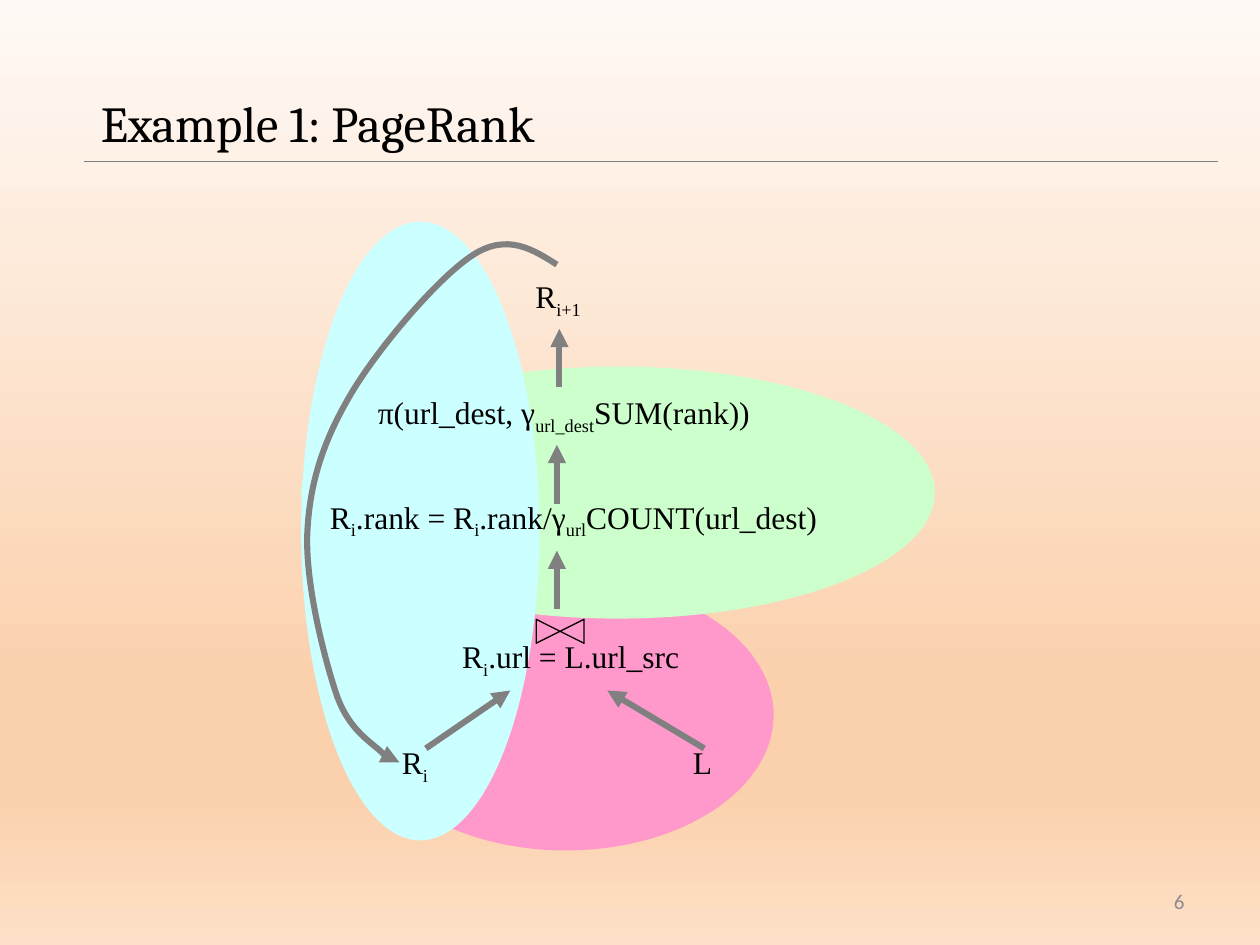
"""Build the PageRank dataflow slide."""
from lxml import etree
from pptx import Presentation
from pptx.dml.color import RGBColor
from pptx.enum.shapes import MSO_CONNECTOR, MSO_SHAPE
from pptx.enum.text import MSO_ANCHOR, PP_ALIGN
from pptx.oxml.ns import qn
from pptx.util import Inches, Pt

ELLIPSE, JOIN = MSO_SHAPE.OVAL, MSO_SHAPE.FLOWCHART_COLLATE
STRAIGHT = MSO_CONNECTOR.STRAIGHT
TOP, MIDDLE = MSO_ANCHOR.TOP, MSO_ANCHOR.MIDDLE
LEFT, RIGHT = PP_ALIGN.LEFT, PP_ALIGN.RIGHT

BLACK = RGBColor(0x00, 0x00, 0x00)
GRAY = RGBColor(0x80, 0x80, 0x80)
PAGE_GRAY = RGBColor(0x8C, 0x8C, 0x8C)
PINK = RGBColor(0xFF, 0x99, 0xCC)
GREEN = RGBColor(0xCC, 0xFF, 0xCC)
CYAN = RGBColor(0xCC, 0xFF, 0xFF)

BACKDROP = [(0, "FFFAF6"), (74, "FBD0AC"), (83, "FBD0AC"), (100, "FDE0C7")]
TITLE_FONT = {"name": "Cambria", "size": Pt(28.8)}
LABEL_FONT = {"name": "Times New Roman", "size": Pt(18)}
PAGE_FONT = {"name": "Calibri", "size": Pt(12)}

TITLE = ("Example 1: PageRank", (0.7, 0.66, 9.25, 0.62))
PAGE_NUMBER = ("6", (7.17, 6.95, 2.33, 0.4))
TITLE_RULE = ((0.67, 1.28), (9.67, 1.28))
STAGES = [
    (PINK, (2.84, 4.6, 3.3, 2.15)),
    (GREEN, (2.39, 2.91, 5.03, 2)),
    (CYAN, (2.39, 1.76, 1.89, 4.91)),
]
JOIN_BOX = (4.35, 4.82, 0.19, 0.38)
LABELS = [
    (["R", "i"], (3.09, 5.85, 0.58, 0.56)),
    (["L"], (5.4, 5.85, 0.38, 0.56)),
    (["R", "i", ".rank = R", "i", ".rank/γ", "url", "COUNT(url_dest)"],
     (2.52, 3.9, 4.9, 0.45)),
    (["R", "i", ".url = L.url_src"], (3.57, 5.01, 2.16, 0.45)),
    (["π(url_dest, γ", "url_dest", "SUM(rank))"], (2.9, 3.07, 3.86, 0.45)),
    (["R", "i+1"], (4.15, 2.15, 1.06, 0.56)),
]
ARROWS = [
    ((5.59, 5.94), (4.82, 5.48)),
    ((3.38, 5.94), (4.05, 5.48)),
    ((4.42, 4.83), (4.42, 4.37)),
    ((4.42, 4), (4.42, 3.53)),
    ((4.44, 3.07), (4.44, 2.61)),
]
LOOP_START = (4.42, 2.1)
LOOP_CURVES = [
    (4.23, 1.98), (4.03, 1.85), (3.76, 2.02),
    (3.49, 2.19), (3.01, 2.75), (2.79, 3.12),
    (2.57, 3.49), (2.46, 3.82), (2.44, 4.22),
    (2.42, 4.62), (2.57, 5.21), (2.67, 5.51),
    (2.77, 5.8), (2.95, 5.89), (3.04, 5.98),
    (3.12, 6.07), (3.14, 6.06), (3.17, 6.05),
]


def inches(values):
    return [Inches(value) for value in values]


def paint_backdrop(slide):
    fill = slide.background.fill
    fill.gradient()
    fill.gradient_angle = 270
    stops = next(slide.element.iter(qn("a:gsLst")))
    for stop in list(stops):
        stops.remove(stop)
    for percent, color in BACKDROP:
        stop = etree.SubElement(stops, qn("a:gs"), pos=str(percent * 1000))
        etree.SubElement(stop, qn("a:srgbClr"), val=color)


def write(frame, parts, font, color=BLACK, align=LEFT, anchor=TOP):
    frame.word_wrap = True
    frame.vertical_anchor = anchor
    paragraph = frame.paragraphs[0]
    paragraph.alignment = align
    for index, part in enumerate(parts):
        run = paragraph.add_run()
        run.text = part
        for key, value in font.items():
            setattr(run.font, key, value)
        run.font.color.rgb = color
        if index % 2:
            run.font._element.set("baseline", "-25000")


def style_line(line, width, color=GRAY, arrow=False):
    line.color.rgb = color
    line.width = Pt(width)
    if arrow:
        etree.SubElement(line._get_or_add_ln(), qn("a:tailEnd"), type="triangle")


def connect(slide, start, end, width, arrow=False):
    connector = slide.shapes.add_connector(STRAIGHT, *inches(start + end))
    style_line(connector.line, width, arrow=arrow)
    etree.SubElement(connector._element.spPr, qn("a:effectLst"))


def add_preset(slide, preset, box):
    shape = slide.shapes.add_shape(preset, *inches(box))
    shape.shadow.inherit = False
    return shape


def add_loop(slide):
    builder = slide.shapes.build_freeform(*inches(LOOP_START), scale=1.0)
    builder.add_line_segments([inches(point) for point in LOOP_CURVES], close=False)
    loop = builder.convert_to_shape()
    loop.shadow.inherit = False
    loop.fill.background()
    style_line(loop.line, 3.5, arrow=True)
    outline = next(loop._element.iter(qn("a:path")))
    segments = outline.findall(qn("a:lnTo"))
    for first in range(0, len(segments), 3):
        curve = etree.SubElement(outline, qn("a:cubicBezTo"))
        for segment in segments[first:first + 3]:
            curve.append(segment[0])
            outline.remove(segment)


def main():
    deck = Presentation()
    deck.slide_width, deck.slide_height = Inches(10), Inches(7.5)
    slide = deck.slides.add_slide(deck.slide_layouts[5])
    paint_backdrop(slide)

    heading, heading_box = TITLE
    title = slide.shapes.title
    title.left, title.top, title.width, title.height = inches(heading_box)
    write(title.text_frame, [heading], TITLE_FONT, anchor=MIDDLE)
    connect(slide, *TITLE_RULE, 0.75)

    number, number_box = PAGE_NUMBER
    page = slide.shapes.add_textbox(*inches(number_box))
    write(page.text_frame, [number], PAGE_FONT, PAGE_GRAY, RIGHT, MIDDLE)

    for color, box in STAGES:
        stage = add_preset(slide, ELLIPSE, box)
        stage.fill.solid()
        stage.fill.fore_color.rgb = color
        stage.line.fill.background()

    join = add_preset(slide, JOIN, JOIN_BOX)
    join.rotation = 270
    join.fill.background()
    style_line(join.line, 0.75, BLACK)

    for parts, box in LABELS:
        label = slide.shapes.add_textbox(*inches(box))
        write(label.text_frame, parts, LABEL_FONT)
    for start, end in ARROWS:
        connect(slide, start, end, 3.5, arrow=True)
    add_loop(slide)

    deck.save("out.pptx")


if __name__ == "__main__":
    main()
